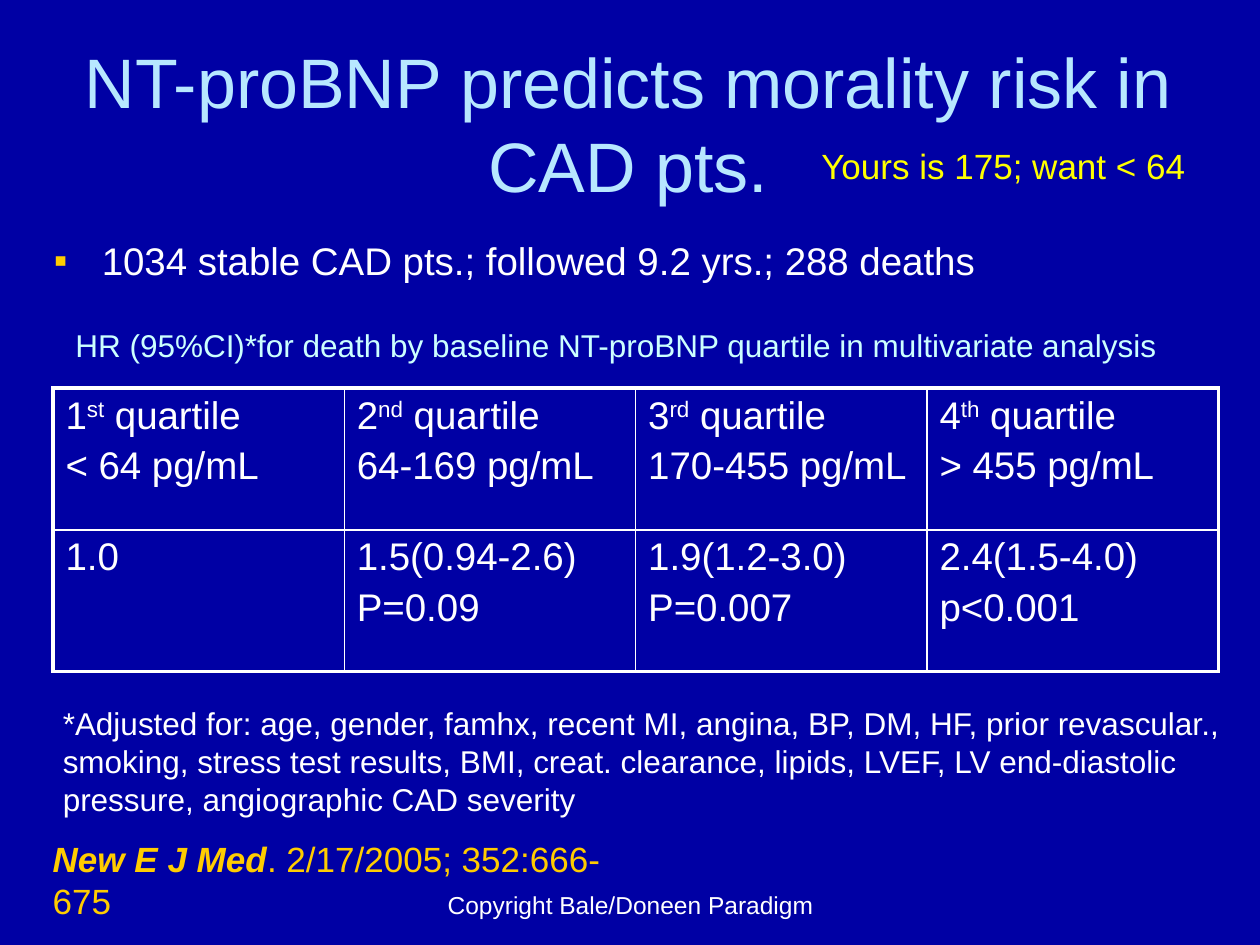
from lxml.etree import SubElement
from pptx import Presentation
from pptx.dml.color import RGBColor
from pptx.enum.text import MSO_ANCHOR as Anchor, PP_ALIGN as Align
from pptx.oxml import parse_xml
from pptx.oxml.ns import nsdecls, qn
from pptx.util import Inches, Pt

THEME = {
    "font": "Arial",
    "background": "0000A4", "title": "B7E7FF", "body": "FFFFFF",
    "caption": "CCFFFF", "accent": "FFCC00", "note": "FFFF00",
    "title_size": 40, "body_size": 22, "citation_size": 20,
    "caption_size": 18, "footer_size": 14,
    "outer_border": 2.25, "inner_border": 1,
}

TITLE = "NT-proBNP predicts morality risk in CAD pts."
FINDING = "1034 stable CAD pts.; followed 9.2 yrs.; 288 deaths"
CAPTION = "HR (95%CI)*for death by baseline NT-proBNP quartile in multivariate analysis"
ADJUSTMENTS = [
    "*Adjusted for: age, gender, famhx, recent MI, angina, BP, DM, HF, prior revascular.,",
    "smoking, stress test results, BMI, creat. clearance, lipids, LVEF, LV end-diastolic",
    "pressure, angiographic CAD severity",
]
CITATION = [[("New E J Med", "emphasis"), (". 2/17/2005; 352:666-675", "")]]
PATIENT_NOTE = "Yours is 175; want < 64"
FOOTER = "Copyright Bale/Doneen Paradigm"

QUARTILES = [
    ("1", "st", "< 64 pg/mL", ["1.0"]),
    ("2", "nd", "64-169 pg/mL", ["1.5(0.94-2.6)", "P=0.09"]),
    ("3", "rd", "170-455 pg/mL", ["1.9(1.2-3.0)", "P=0.007"]),
    ("4", "th", "> 455 pg/mL", ["2.4(1.5-4.0)", "p<0.001"]),
]


def color(name):
    return RGBColor.from_string(THEME[name])


def write(frame, paragraphs, size="body_size", fill="body", align=Align.LEFT,
          anchor=Anchor.TOP, gap=0, bullet=False):
    frame.word_wrap = True
    frame.vertical_anchor = anchor
    if isinstance(paragraphs, str):
        paragraphs = [paragraphs]
    for index, content in enumerate(paragraphs):
        paragraph = frame.add_paragraph() if index else frame.paragraphs[0]
        paragraph.alignment = align
        paragraph.space_before = Pt(gap if index else 0)
        if bullet:
            add_bullet(paragraph)
        runs = [(content, "")] if isinstance(content, str) else content
        for text, style in runs:
            run = paragraph.add_run()
            run.text = text
            run.font.name = THEME["font"]
            run.font.size = Pt(THEME[size])
            run.font.color.rgb = color(fill)
            if style == "emphasis":
                run.font.bold = run.font.italic = True
            if style == "superscript":
                run.font._element.set("baseline", "30000")


def add_bullet(paragraph):
    properties = paragraph._p.get_or_add_pPr()
    properties.set("marL", str(Inches(0.38)))
    properties.set("indent", str(-Inches(0.38)))
    bullet_color = SubElement(properties, qn("a:buClr"))
    SubElement(bullet_color, qn("a:srgbClr"), val=THEME["accent"])
    SubElement(properties, qn("a:buFont"), typeface=THEME["font"])
    SubElement(properties, qn("a:buChar"), char="▪")


def add_text(slide, box, paragraphs, **style):
    shape = slide.shapes.add_textbox(*map(Inches, box))
    write(shape.text_frame, paragraphs, **style)


def set_borders(cell, outer_sides):
    cell.fill.background()
    properties = cell._tc.get_or_add_tcPr()
    for index, side in enumerate("LRTB"):
        width = THEME["outer_border" if side in outer_sides else "inner_border"]
        properties.insert(index, parse_xml(
            f'<a:ln{side} {nsdecls("a")} w="{Pt(width)}"><a:solidFill>'
            f'<a:srgbClr val="{THEME["body"]}"/></a:solidFill></a:ln{side}>'))


def add_quartile_table(slide):
    last = len(QUARTILES) - 1
    table = slide.shapes.add_table(
        2, len(QUARTILES), Inches(0.42), Inches(3.08), Inches(9.25), Inches(2.25)).table
    table.first_row = table.horz_banding = False
    for column, (number, suffix, level, hazard) in enumerate(QUARTILES):
        heading = [(number, ""), (suffix, "superscript"), (" quartile", "")]
        sides = "L" * (column == 0) + "R" * (column == last)
        for row, (lines, edge) in enumerate([([heading, level], "T"), (hazard, "B")]):
            cell = table.cell(row, column)
            write(cell.text_frame, lines, gap=4.4)
            set_borders(cell, sides + edge)


def main():
    presentation = Presentation()
    presentation.slide_width, presentation.slide_height = Inches(10), Inches(7.5)
    slide = presentation.slides.add_slide(presentation.slide_layouts[5])
    slide.background.fill.solid()
    slide.background.fill.fore_color.rgb = color("background")

    title = slide.shapes.title
    title.left, title.top, title.width, title.height = map(Inches, (0.33, 0.25, 9.31, 1.45))
    write(title.text_frame, TITLE, size="title_size", fill="title",
          align=Align.CENTER, anchor=Anchor.MIDDLE)

    add_text(slide, (3.42, 6.83, 3.17, 0.52), FOOTER, size="footer_size",
             align=Align.CENTER, anchor=Anchor.BOTTOM)
    add_text(slide, (0.33, 1.83, 9.34, 0.6), FINDING, bullet=True)
    add_quartile_table(slide)
    add_text(slide, (0.5, 2.54, 9, 0.4), CAPTION, size="caption_size", fill="caption")
    add_text(slide, (0.4, 5.54, 9.47, 1), ADJUSTMENTS, size="caption_size")
    add_text(slide, (0.32, 6.6, 5, 0.43), CITATION, size="citation_size", fill="accent")
    add_text(slide, (6.42, 1.1, 3.67, 0.43), PATIENT_NOTE, size="citation_size", fill="note")

    presentation.save("out.pptx")


if __name__ == "__main__":
    main()
